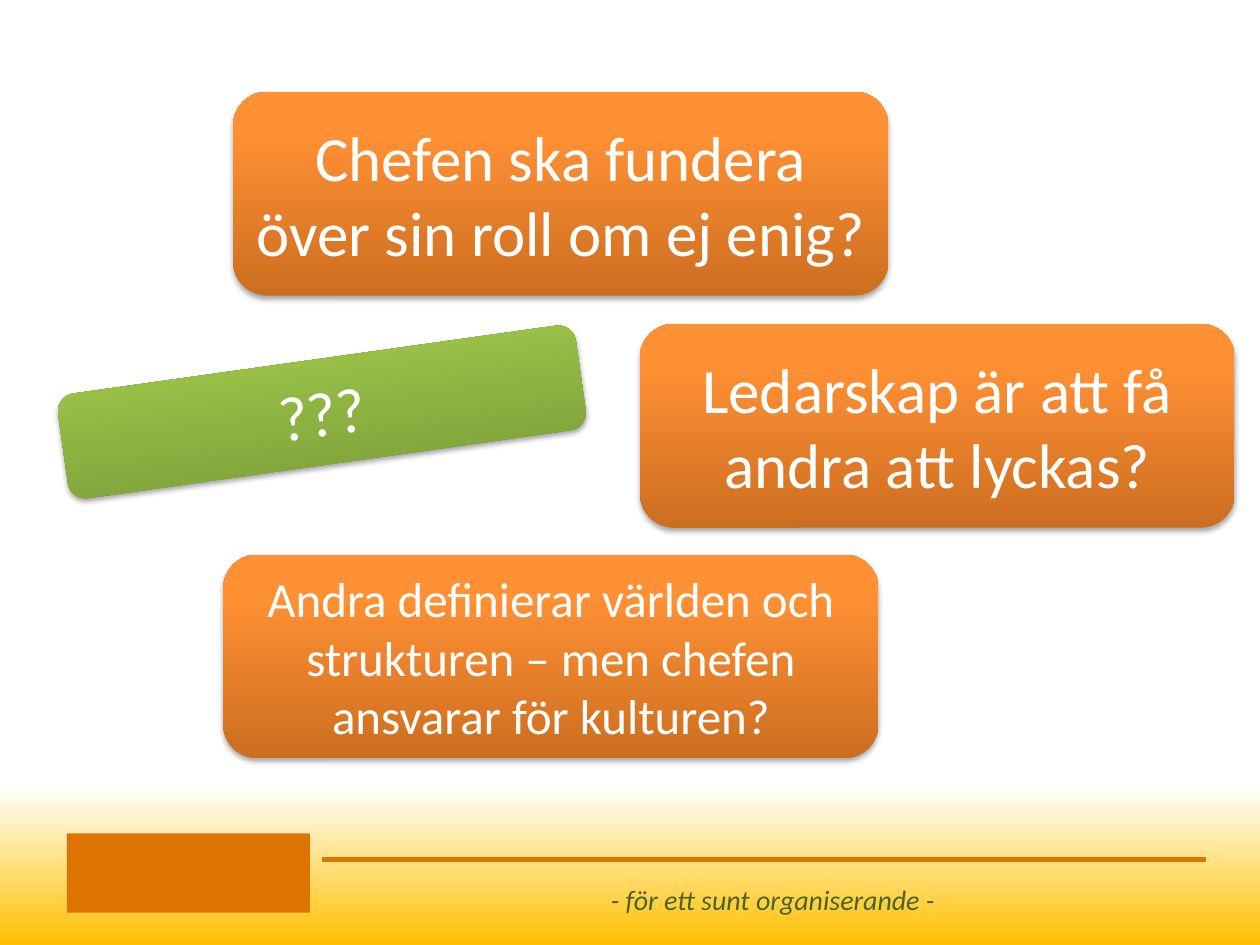
from lxml import etree
from pptx import Presentation
from pptx.dml.color import RGBColor
from pptx.enum.shapes import MSO_CONNECTOR, MSO_SHAPE
from pptx.enum.text import MSO_ANCHOR, PP_ALIGN
from pptx.oxml.ns import qn
from pptx.util import Cm, Pt

ROUNDED, RECTANGLE = MSO_SHAPE.ROUNDED_RECTANGLE, MSO_SHAPE.RECTANGLE
STRAIGHT = MSO_CONNECTOR.STRAIGHT
CENTER, MIDDLE = PP_ALIGN.CENTER, MSO_ANCHOR.MIDDLE

COLORS = {"white": "FFFFFF", "amber": "FFC000", "accent": "DE7400",
          "tagline": "4F6228", "shadow": "000000"}
# Gradient stops: (percent, colour)
ORANGE = [(0, "CC6E20"), (80, "FF9034"), (100, "FF9136")]
GREEN = [(0, "779737"), (80, "9BC348"), (100, "9DC746")]
GLOW = [(83, COLORS["white"]), (100, COLORS["amber"])]

WIDTH, HEIGHT = 25.4, 19.05
FOOTER_H = 2.6
CARD_H = 4.11


def set_gradient(fill, element, stops, angle):
    """Fill with any number of stops; angle runs counter-clockwise."""
    fill.gradient()
    fill.gradient_angle = angle
    gs_list = next(element.iter(qn("a:gsLst")))
    for gs in list(gs_list):
        gs_list.remove(gs)
    for percent, color in stops:
        gs = etree.SubElement(gs_list, qn("a:gs"), pos=str(percent * 1000))
        etree.SubElement(gs, qn("a:srgbClr"), val=color)


def add_soft_shadow(sp):
    sp.shadow.inherit = False
    effects = sp.element.spPr.find(qn("a:effectLst"))
    shadow = etree.SubElement(effects, qn("a:outerShdw"), blurRad=str(Pt(3.1)),
                              dist=str(Pt(1.8)), dir="5400000", rotWithShape="0")
    color = etree.SubElement(shadow, qn("a:srgbClr"), val=COLORS["shadow"])
    etree.SubElement(color, qn("a:alpha"), val="35000")


def write_text(sp, text, size, color, italic=False):
    tf = sp.text_frame
    tf.word_wrap, tf.vertical_anchor = True, MIDDLE
    p = tf.paragraphs[0]
    p.alignment = CENTER
    r = p.add_run()
    r.text = text
    r.font.name, r.font.size, r.font.italic = "Calibri", Pt(size), italic
    r.font.color.rgb = RGBColor.from_string(COLORS[color])


def add_card(s, text, x, y, w, h=CARD_H, stops=ORANGE, size=36, rotation=0):
    sp = s.shapes.add_shape(ROUNDED, Cm(x), Cm(y), Cm(w), Cm(h))
    sp.rotation = rotation
    set_gradient(sp.fill, sp.element, stops, 90)
    sp.line.fill.background()
    add_soft_shadow(sp)
    write_text(sp, text, size, "white")


def add_footer(s, x, y, w):
    accent = RGBColor.from_string(COLORS["accent"])
    line = s.shapes.add_connector(STRAIGHT, Cm(x + 6.5), Cm(y + 0.87),
                                  Cm(x + w - 1.09), Cm(y + 0.87))
    line.line.width = Pt(3)
    line.line.color.rgb = accent
    etree.SubElement(line.element.spPr, qn("a:effectLst"))

    tagline = s.shapes.add_textbox(Cm(x + 6.88), Cm(y + 1.28), Cm(17.4), Cm(0.79))
    write_text(tagline, "- för ett sunt organiserande -", 16, "tagline", italic=True)

    block = s.shapes.add_shape(RECTANGLE, Cm(x + 1.35), Cm(y + 0.35),
                               Cm(4.9), Cm(1.6))
    block.shadow.inherit = False
    block.fill.solid()
    block.fill.fore_color.rgb = accent
    block.line.fill.background()


def main():
    prs = Presentation()
    prs.slide_width, prs.slide_height = Cm(WIDTH), Cm(HEIGHT)
    s = prs.slides.add_slide(prs.slide_layouts[6])
    set_gradient(s.background.fill, s.element, GLOW, 270)
    add_footer(s, 0, HEIGHT - FOOTER_H, WIDTH)
    add_card(s, "???", 1.22, 7.24, 10.54, h=2.13, stops=GREEN, rotation=352)
    add_card(s, "Chefen ska fundera över sin roll om ej enig?", 4.7, 1.85, 13.21)
    add_card(s, "Andra definierar världen och strukturen – men chefen "
                "ansvarar för kulturen?", 4.5, 11.18, 13.21, size=28)
    add_card(s, "Ledarskap är att få andra att lyckas?", 12.9, 6.53, 11.99)
    prs.save("out.pptx")


if __name__ == "__main__":
    main()
